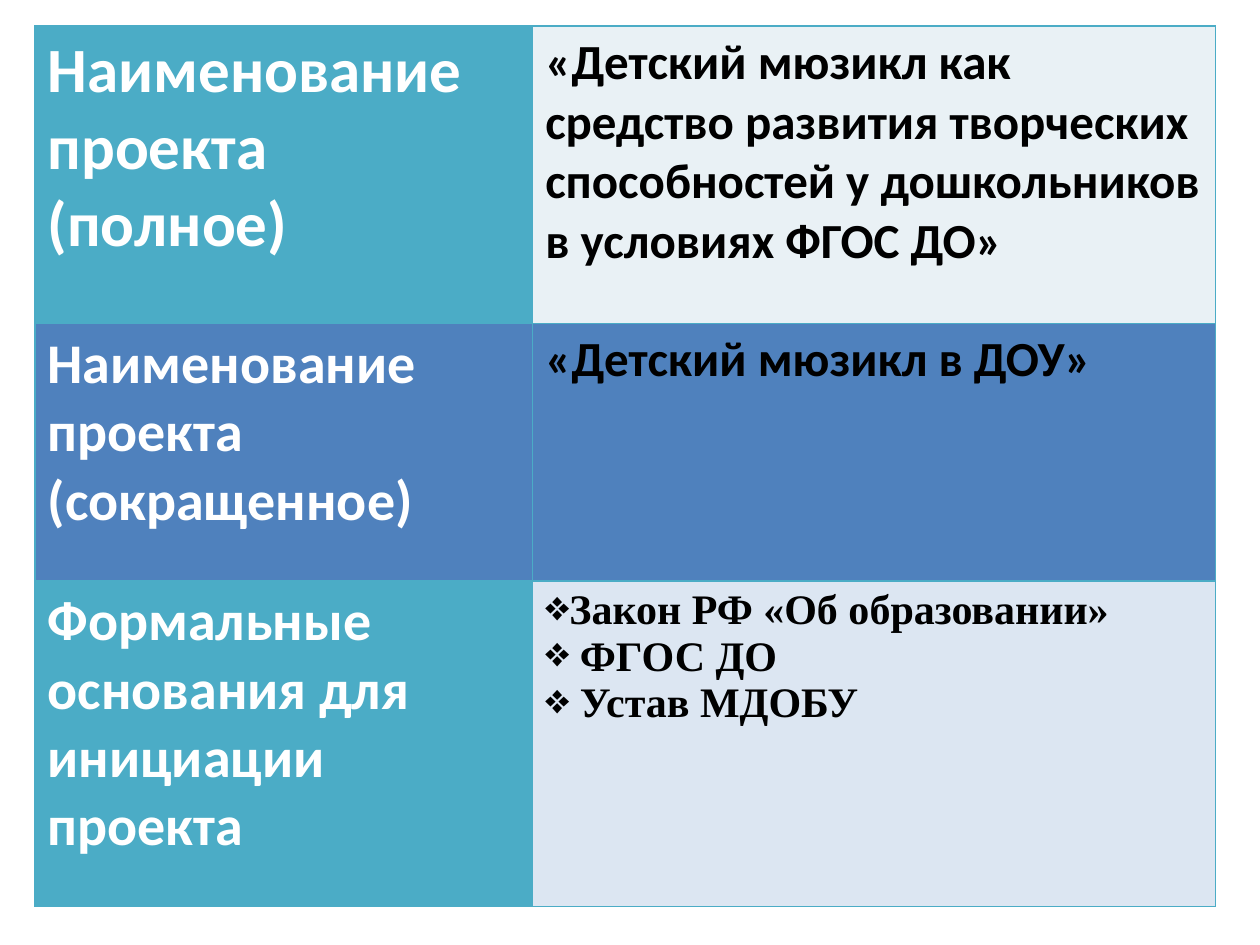
"""Build a slide with a project passport table."""
from lxml.etree import SubElement
from pptx import Presentation
from pptx.dml.color import RGBColor
from pptx.oxml.ns import qn
from pptx.util import Pt

TEAL = RGBColor(0x4B, 0xAC, 0xC6)
BLUE = RGBColor(0x4F, 0x81, 0xBD)
PALE_TEAL = RGBColor(0xE9, 0xF1, 0xF5)
PALE_BLUE = RGBColor(0xDC, 0xE6, 0xF2)
WHITE = RGBColor(0xFF, 0xFF, 0xFF)
BLACK = RGBColor(0, 0, 0)

SANS, SERIF = "Calibri", "Times New Roman"
BULLET = "❖"
LEFT, TOP = 20, 15
COLUMN_WIDTHS = [284.4, 390.2]
COLUMN_COLORS = [WHITE, BLACK]
ROW_HEIGHTS = [170, 147, 186]

ROWS = [
    [(["Наименование проекта (полное)"], SANS, 36, TEAL, None),
     (["«Детский мюзикл как средство развития творческих способностей "
       "у дошкольников в условиях ФГОС ДО»"], SANS, 28, PALE_TEAL, None)],
    [(["Наименование проекта (сокращенное)"], SANS, 32, BLUE, None),
     (["«Детский мюзикл в ДОУ»"], SANS, 28, BLUE, None)],
    [(["Формальные основания для инициации проекта"], SANS, 32, TEAL, None),
     (["Закон РФ «Об образовании»", " ФГОС ДО", " Устав МДОБУ"],
      SERIF, 24, PALE_BLUE, BULLET)],
]


def add_borders(cell):
    properties = cell._tc.get_or_add_tcPr()
    for side in ("lnL", "lnR", "lnT", "lnB"):
        line = SubElement(properties, qn(f"a:{side}"), w=str(Pt(1)))
        fill = SubElement(line, qn("a:solidFill"))
        SubElement(fill, qn("a:srgbClr"), val=str(TEAL))


def add_bullet(paragraph, character):
    properties = paragraph._p.get_or_add_pPr()
    properties.set("marL", "0")
    properties.set("indent", "0")
    SubElement(properties, qn("a:buChar"), char=character)


def fill_cell(cell, content, color):
    lines, font_name, size, background, bullet = content
    add_borders(cell)
    cell.fill.solid()
    cell.fill.fore_color.rgb = background
    frame = cell.text_frame
    for index, text in enumerate(lines):
        paragraph = frame.add_paragraph() if index else frame.paragraphs[0]
        if bullet:
            add_bullet(paragraph, bullet)
        run = paragraph.add_run()
        run.text = text
        run.font.name = font_name
        run.font.size = Pt(size)
        run.font.bold = True
        run.font.color.rgb = color


def main():
    presentation = Presentation()
    presentation.slide_width, presentation.slide_height = Pt(720), Pt(540)
    slide = presentation.slides.add_slide(presentation.slide_layouts[6])
    table = slide.shapes.add_table(
        len(ROWS), len(COLUMN_WIDTHS), Pt(LEFT), Pt(TOP),
        Pt(sum(COLUMN_WIDTHS)), Pt(sum(ROW_HEIGHTS))).table
    for column, width in zip(table.columns, COLUMN_WIDTHS):
        column.width = Pt(width)
    for row, height, contents in zip(table.rows, ROW_HEIGHTS, ROWS):
        row.height = Pt(height)
        for cell, content, color in zip(row.cells, contents, COLUMN_COLORS):
            fill_cell(cell, content, color)
    presentation.save("out.pptx")


if __name__ == "__main__":
    main()
